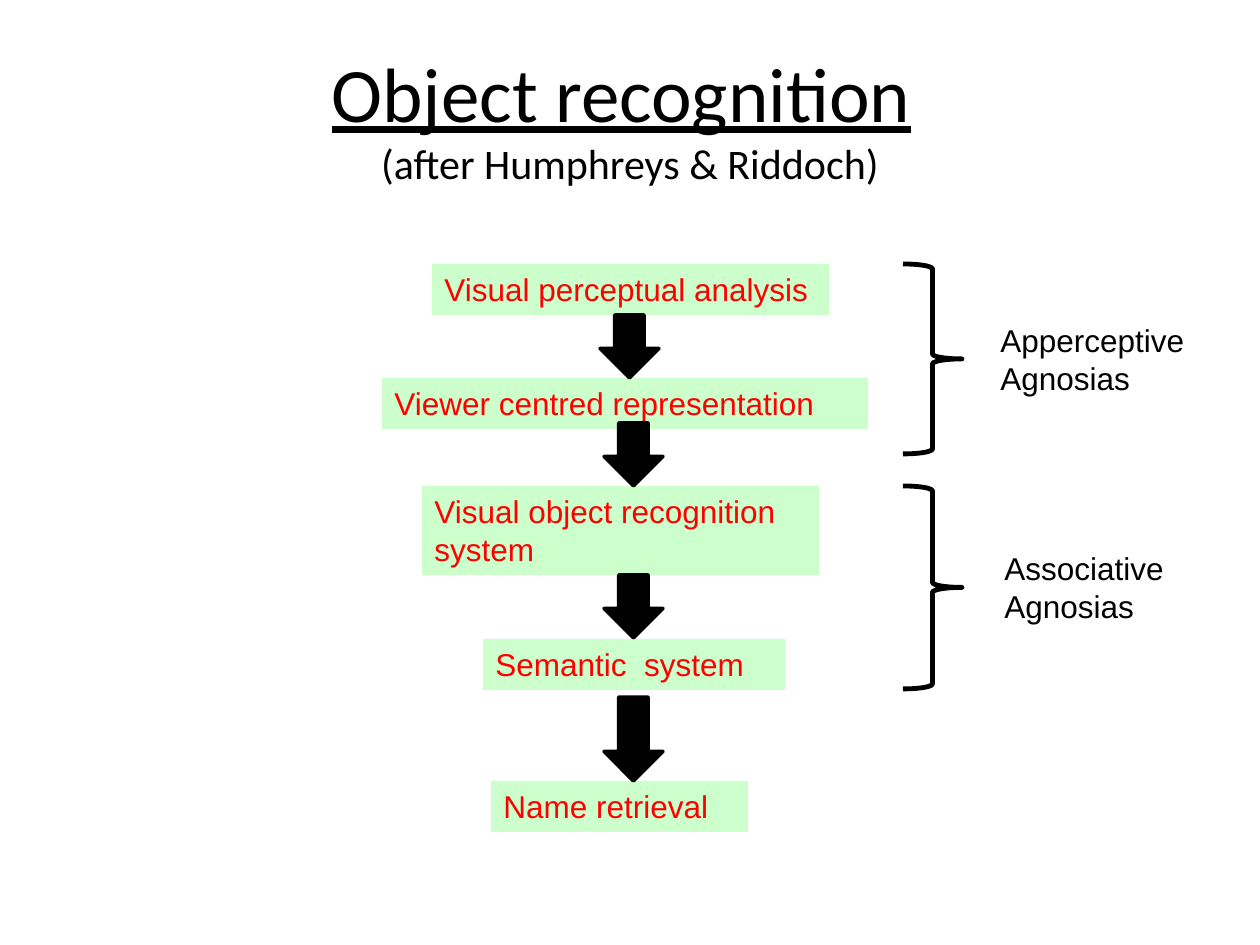
from dataclasses import dataclass

from pptx import Presentation
from pptx.dml.color import RGBColor
from pptx.enum.shapes import MSO_SHAPE as Preset
from pptx.enum.text import MSO_ANCHOR as Anchor, PP_ALIGN as Align
from pptx.util import Pt

EMU_PER_PX = 914400 / 126


def px(length: int) -> int:
    return round(length * EMU_PER_PX)


@dataclass(frozen=True)
class Theme:
    title_font: str = "Calibri"
    body_font: str = "Arial"
    title_size: int = 44
    subtitle_size: int = 24
    body_size: int = 18
    ink: RGBColor = RGBColor(0, 0, 0)
    stage_text: RGBColor = RGBColor(255, 0, 0)
    stage_fill: RGBColor = RGBColor(204, 255, 204)
    arrow_line: float = 2
    brace_line: float = 2.75


@dataclass(frozen=True)
class Label:
    text: str
    left: int
    top: int
    width: int
    height: int


@dataclass(frozen=True)
class Mark:
    left: int
    top: int
    height: int


THEME = Theme()
MARK_WIDTH = 59  # arrows and braces share one width

STAGES = [
    Label("Visual perceptual analysis", 432, 264, 397, 51),
    Label("Viewer centred representation", 382, 378, 486, 51),
    Label("Visual object recognition system", 422, 486, 397, 89),
    Label("Semantic  system", 483, 639, 302, 51),
    Label("Name retrieval", 491, 781, 257, 51),
]
ARROWS = [Mark(600, 315, 63), Mark(604, 423, 63), Mark(604, 575, 63), Mark(604, 697, 84)]
BRACES = [Mark(903, 264, 190), Mark(903, 486, 203)]
AGNOSIAS = [
    Label("Apperceptive Agnosias", 988, 315, 218, 89),
    Label("Associative Agnosias", 992, 543, 218, 89),
]


def add_run(paragraph, text: str, font: str, size: int, color: RGBColor,
            underline: bool = False) -> None:
    run = paragraph.add_run()
    run.text = text
    run.font.name = font
    run.font.size = Pt(size)
    run.font.color.rgb = color
    run.font.underline = underline


def add_title(slide) -> None:
    box = slide.shapes.add_textbox(px(63), px(38), px(1134), px(157))
    frame = box.text_frame
    frame.word_wrap = True
    frame.vertical_anchor = Anchor.MIDDLE
    paragraph = frame.paragraphs[0]
    paragraph.alignment = Align.CENTER
    add_run(paragraph, "Object recognition", THEME.title_font, THEME.title_size, THEME.ink, True)
    add_run(paragraph, " ", THEME.title_font, THEME.title_size, THEME.ink)
    paragraph.add_line_break()
    add_run(paragraph, "(after Humphreys & Riddoch)", THEME.title_font,
            THEME.subtitle_size, THEME.ink)


def write_label(shape, text: str, color: RGBColor) -> None:
    frame = shape.text_frame
    frame.word_wrap = True
    frame.vertical_anchor = Anchor.TOP
    paragraph = frame.paragraphs[0]
    paragraph.alignment = Align.LEFT
    add_run(paragraph, text, THEME.body_font, THEME.body_size, color)


def add_stage(slide, stage: Label) -> None:
    shape = slide.shapes.add_shape(Preset.RECTANGLE, px(stage.left), px(stage.top),
                                   px(stage.width), px(stage.height))
    shape.shadow.inherit = False
    shape.fill.solid()
    shape.fill.fore_color.rgb = THEME.stage_fill
    shape.line.fill.background()
    write_label(shape, stage.text, THEME.stage_text)


def add_agnosia(slide, label: Label) -> None:
    box = slide.shapes.add_textbox(px(label.left), px(label.top),
                                   px(label.width), px(label.height))
    write_label(box, label.text, THEME.ink)


def add_mark(slide, preset: Preset, mark: Mark, line_width: float, filled: bool) -> None:
    shape = slide.shapes.add_shape(preset, px(mark.left), px(mark.top),
                                   px(MARK_WIDTH), px(mark.height))
    shape.shadow.inherit = False
    if filled:
        shape.fill.solid()
        shape.fill.fore_color.rgb = THEME.ink
    else:
        shape.fill.background()
    shape.line.color.rgb = THEME.ink
    shape.line.width = Pt(line_width)


def main() -> None:
    presentation = Presentation()
    presentation.slide_width = px(1260)
    presentation.slide_height = px(945)
    slide = presentation.slides.add_slide(presentation.slide_layouts[6])

    add_title(slide)

    # Processing stages and the flow between them
    for stage in STAGES:
        add_stage(slide, stage)
    for arrow in ARROWS:
        add_mark(slide, Preset.DOWN_ARROW, arrow, THEME.arrow_line, True)

    # Agnosias that group the stages
    for brace in BRACES:
        add_mark(slide, Preset.RIGHT_BRACE, brace, THEME.brace_line, False)
    for agnosia in AGNOSIAS:
        add_agnosia(slide, agnosia)

    presentation.save("out.pptx")


if __name__ == "__main__":
    main()
